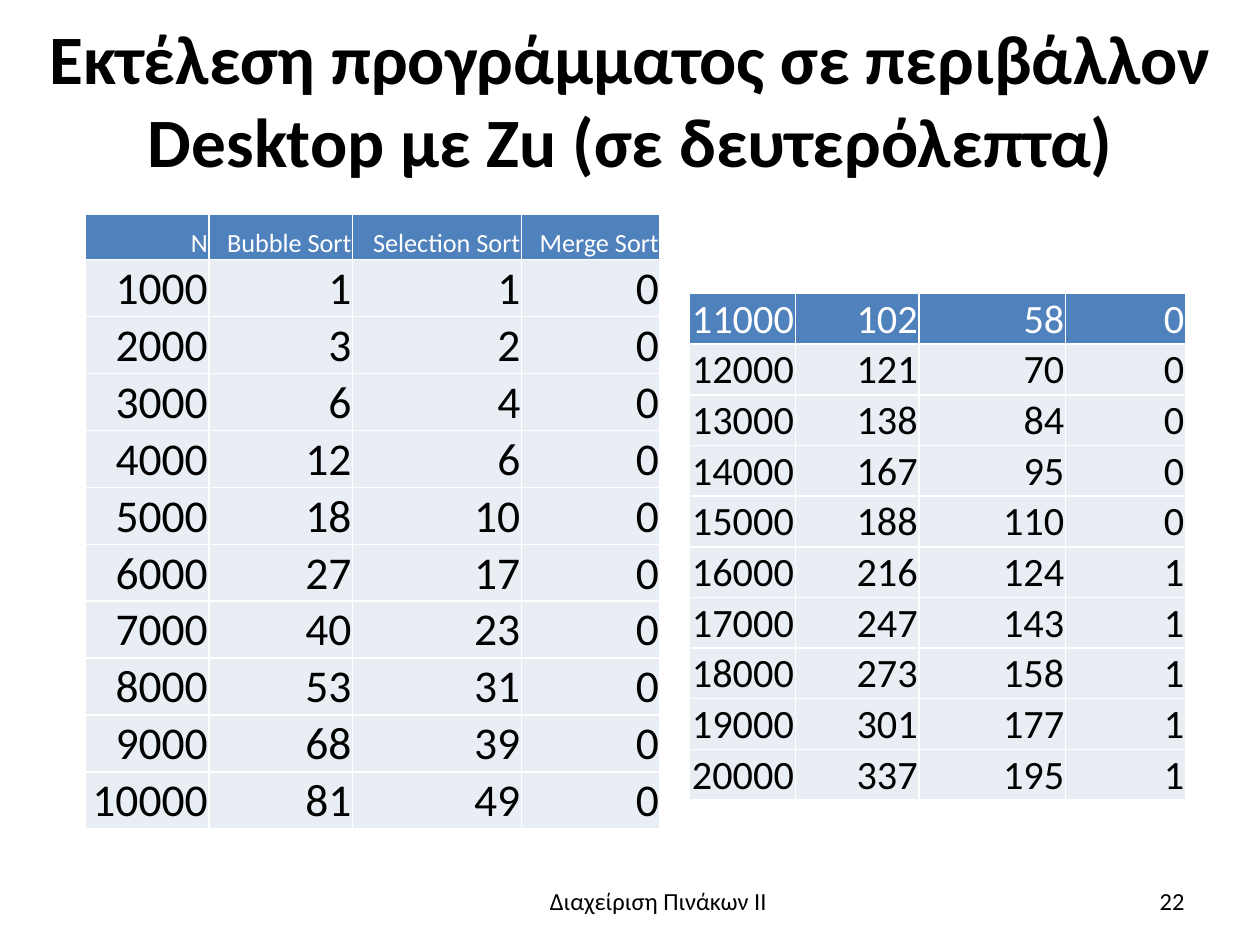
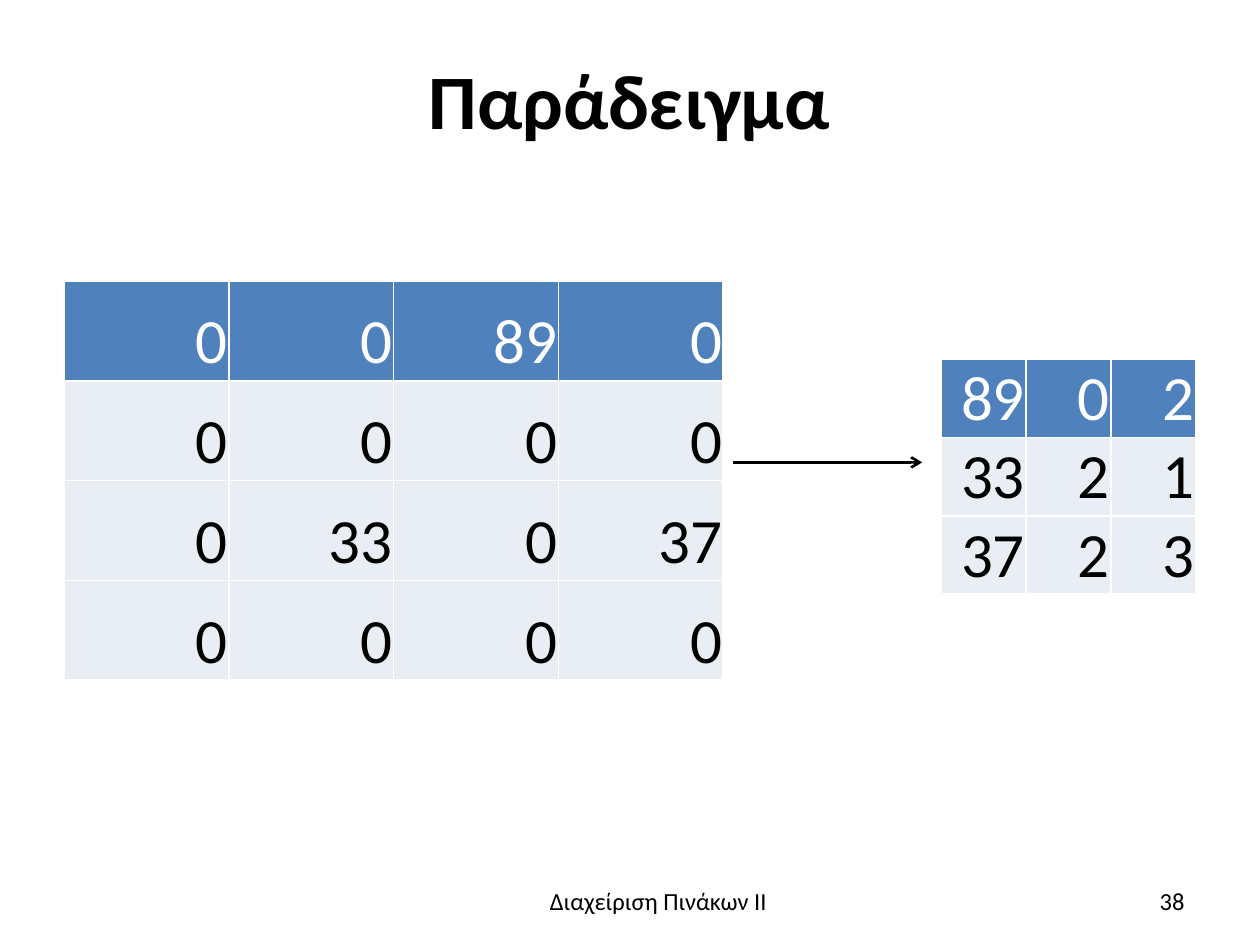
from dataclasses import dataclass

from lxml import etree
from pptx import Presentation
from pptx.dml.color import RGBColor
from pptx.enum.shapes import MSO_CONNECTOR
from pptx.enum.text import MSO_ANCHOR, MSO_AUTO_SIZE, PP_ALIGN
from pptx.oxml.ns import qn
from pptx.util import Inches, Pt

MID, RIGHT = PP_ALIGN.CENTER, PP_ALIGN.RIGHT
TOP, CENTER, LOW = MSO_ANCHOR.TOP, MSO_ANCHOR.MIDDLE, MSO_ANCHOR.BOTTOM
FIXED = MSO_AUTO_SIZE.NONE
STRAIGHT = MSO_CONNECTOR.STRAIGHT


@dataclass(frozen=True)
class Theme:
    """Colours, font and type sizes that the slides share."""

    font: str = "Calibri"
    ink: str = "000000"
    paper: str = "FFFFFF"
    head: str = "4F81BD"
    body: str = "E9EDF4"
    title: float = 44
    long: float = 39.6
    foot: float = 14
    label: float = 15
    large: float = 26
    small: float = 23
    matrix: float = 36
    rule: float = 1
    arrow: float = 1.5


THEME = Theme()

HEADS = ["Ν", "Bubble Sort", "Selection Sort", "Merge Sort"]
BUBBLE = [1, 3, 6, 12, 18, 27, 40, 53, 68, 81,
          102, 121, 138, 167, 188, 216, 247, 273, 301, 337]
SELECT = [1, 2, 4, 6, 10, 17, 23, 31, 39, 49,
          58, 70, 84, 95, 110, 124, 143, 158, 177, 195]
MERGE = [0] * 15 + [1] * 5
COUNTS = range(1000, 21000, 1000)
TIMES = list(zip(COUNTS, BUBBLE, SELECT, MERGE))

SPARSE = [[0, 0, 89, 0], [0, 0, 0, 0], [0, 33, 0, 37], [0, 0, 0, 0]]
PACKED = [[value, row, col] for row, line in enumerate(SPARSE)
          for col, value in enumerate(line) if value]


def write(frame, text, size, color, align, bold=False):
    """Write one formatted run into the first paragraph of a frame."""
    para = frame.paragraphs[0]
    para.alignment = align
    run = para.add_run()
    run.text = str(text)
    font = run.font
    font.name, font.size, font.bold = THEME.font, Pt(size), bold
    font.color.rgb = RGBColor.from_string(color)


def place(shape, box):
    """Move a shape to a box of left, top, width and height in inches."""
    shape.left, shape.top, shape.width, shape.height = map(Inches, box)


def add_title(slide, box, text, size):
    """Fill and place the title placeholder."""
    title = slide.shapes.title
    place(title, box)
    frame = title.text_frame
    frame.word_wrap, frame.auto_size = True, FIXED
    frame.vertical_anchor = CENTER
    write(frame, text, size, THEME.ink, MID, True)


def add_note(slide, box, text, align, anchor):
    """Add one line of footer text."""
    frame = slide.shapes.add_textbox(*map(Inches, box)).text_frame
    frame.word_wrap = True
    frame.vertical_anchor = anchor
    write(frame, text, THEME.foot, THEME.ink, align)


def add_foot(slide, number):
    """Add the lecture name and the page number."""
    add_note(slide, (3.48, 6.98, 3.49, 0.55), "Διαχείριση Πινάκων ΙΙ", MID, TOP)
    add_note(slide, (7.17, 6.95, 2.33, 0.4), number, RIGHT, CENTER)


def edge(cell):
    """Draw the four borders of a cell."""
    props = cell._tc.get_or_add_tcPr()
    for spot, side in enumerate("LRTB"):
        line = etree.Element(qn(f"a:ln{side}"), w=str(Pt(THEME.rule)))
        fill = etree.SubElement(line, qn("a:solidFill"))
        etree.SubElement(fill, qn("a:srgbClr"), val=THEME.paper)
        props.insert(spot, line)


def fill_cell(cell, value, size, first):
    """Format a cell as part of the header row or of the body."""
    cell.margin_left = cell.margin_right = cell.margin_top = Inches(0.01)
    cell.margin_bottom = 0
    cell.vertical_anchor = LOW
    cell.fill.solid()
    cell.fill.fore_color.rgb = RGBColor.from_string(
        THEME.head if first else THEME.body)
    edge(cell)
    write(cell.text_frame, value, size,
          THEME.paper if first else THEME.ink, RIGHT)


def add_grid(slide, box, data, size, shares=None, top=None, label=None):
    """Add a table whose columns share the box width by weight."""
    rows, cols = len(data), len(data[0])
    shares = shares or [1] * cols
    table = slide.shapes.add_table(rows, cols, *map(Inches, box)).table
    table.horz_banding = False
    for col, share in zip(table.columns, shares):
        col.width = Inches(box[2] * share / sum(shares))
    if top:
        table.rows[0].height = Inches(top)
        for spot in range(1, rows):
            table.rows[spot].height = Inches((box[3] - top) / (rows - 1))
    for y, line in enumerate(data):
        for x, value in enumerate(line):
            kind = label if label and y == 0 else size
            fill_cell(table.cell(y, x), value, kind, y == 0)


def add_arrow(slide, start, end):
    """Add a straight line with an open arrowhead at its end."""
    arrow = slide.shapes.add_connector(STRAIGHT, *map(Inches, start + end))
    arrow.line.color.rgb = RGBColor.from_string(THEME.ink)
    arrow.line.width = Pt(THEME.arrow)
    etree.SubElement(arrow.line._get_or_add_ln(), qn("a:tailEnd"), type="arrow")
    etree.SubElement(arrow._element.spPr, qn("a:effectLst"))


def times_slide(slide):
    """Build the slide of sorting times."""
    add_title(slide, (0.2, 0.09, 9.61, 1.38),
              "Εκτέλεση προγράμματος σε περιβάλλον Desktop με Zu "
              "(σε δευτερόλεπτα)", THEME.long)
    add_grid(slide, (0.68, 1.7, 4.56, 4.8), [HEADS] + TIMES[:10], THEME.large,
             [0.98, 1.14, 1.34, 1.1], 0.36, THEME.label)
    add_grid(slide, (5.47, 2.33, 3.94, 3.8), TIMES[10:], THEME.small,
             [0.84, 0.98, 1.16, 0.95])
    add_foot(slide, 22)


def matrix_slide(slide):
    """Build the slide that packs a sparse matrix."""
    add_title(slide, (0.35, 0.09, 9.29, 1.38), "Παράδειγμα", THEME.title)
    add_grid(slide, (0.51, 2.23, 5.23, 3.17), SPARSE, THEME.matrix)
    add_arrow(slide, (5.82, 3.67), (7.32, 3.67))
    add_grid(slide, (7.47, 2.85, 2.02, 1.71), PACKED, THEME.matrix)
    add_foot(slide, 38)


def main():
    """Build and save the slides."""
    deck = Presentation()
    deck.slide_width, deck.slide_height = Inches(10), Inches(7.5)
    for build in (times_slide, matrix_slide):
        build(deck.slides.add_slide(deck.slide_layouts[5]))
    deck.save("out.pptx")


if __name__ == "__main__":
    main()
